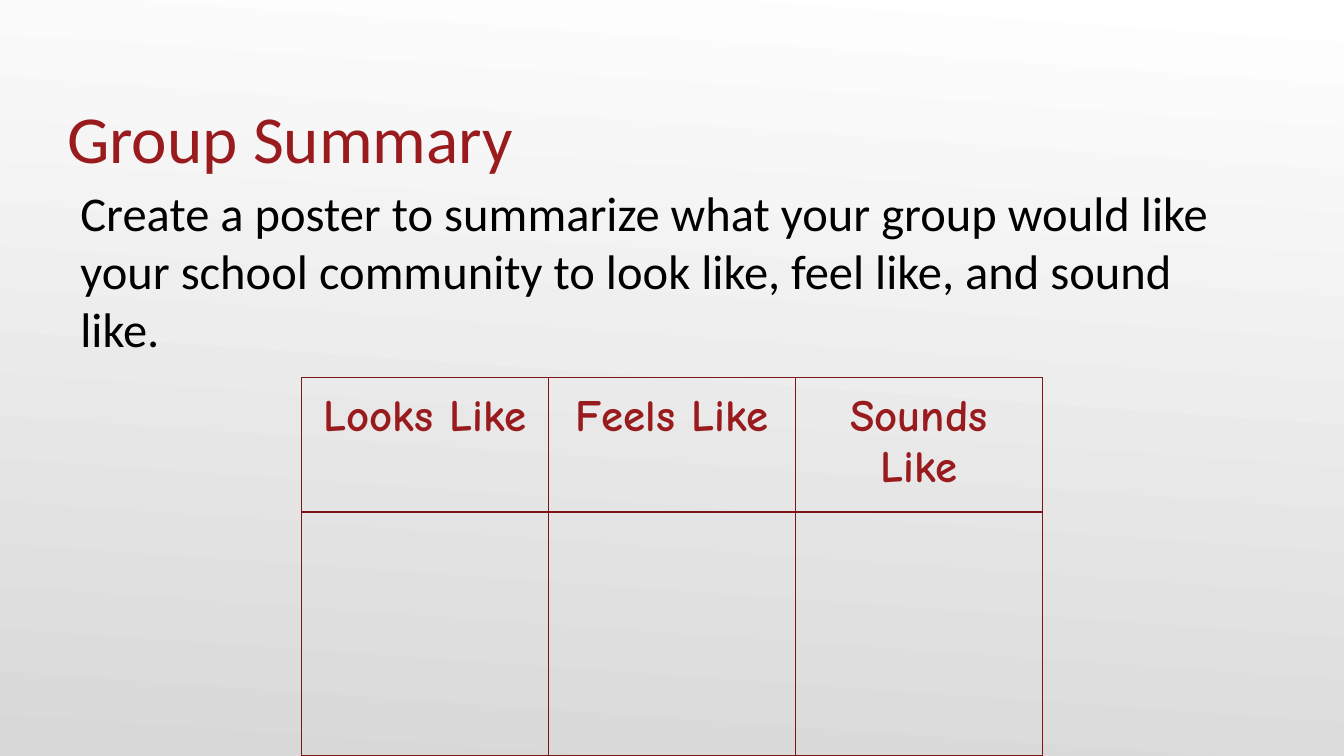
from dataclasses import dataclass

import pptx
import pptx.dml.color
import pptx.enum.text
import pptx.oxml
import pptx.oxml.ns
import pptx.util
from pptx.util import Inches

RGB = pptx.dml.color.RGBColor.from_string
Align = pptx.enum.text.PP_ALIGN
Anchor = pptx.enum.text.MSO_ANCHOR


@dataclass(frozen=True)
class TextStyle:
    font: str
    size: float
    color: str
    bold: bool = False
    align: Align = Align.LEFT


@dataclass(frozen=True)
class Theme:
    title: TextStyle = TextStyle("Calibri", 36, "991B1E")
    body: TextStyle = TextStyle("Calibri", 26, "000000")
    header: TextStyle = TextStyle("Comic Neue", 24, "991B1E", True, Align.CENTER)
    border_color: str = "7D1619"
    border_width: float = 0.75
    background: tuple[str, str] = ("FFFFFF", "D8D8D8")
    background_angle: float = 266


@dataclass(frozen=True)
class Frame:
    left: float
    top: float
    width: float
    height: float

    def lengths(self) -> tuple:
        return tuple(Inches(n) for n in (self.left, self.top, self.width, self.height))


THEME = Theme()
SLIDE_WIDTH = 10
SLIDE_HEIGHT = SLIDE_WIDTH * 9 / 16
TABLE_WIDTH = 5.51
ROW_HEIGHTS = (0.66, 1.81)
TITLE_FRAME = Frame(0.5, 0.38, 9, 0.94)
BODY_FRAME = Frame(0.5, 1.31, 9, 3.6)
TABLE_FRAME = Frame((SLIDE_WIDTH - TABLE_WIDTH) / 2, 2.81, TABLE_WIDTH, sum(ROW_HEIGHTS))
HEADERS = ("Looks Like", "Feels Like", "Sounds Like")
CELL_MARGIN = 0.1
INSTRUCTION = (
    "Create a poster to summarize what your group would like your school "
    "community to look like, feel like, and sound like."
)


def write_text(text_frame, text: str, style: TextStyle) -> None:
    text_frame.text = text
    para = text_frame.paragraphs[0]
    para.alignment = style.align
    for span in para.runs:
        span.font.name = style.font
        span.font.size = pptx.util.Pt(style.size)
        span.font.bold = style.bold
        span.font.color.rgb = RGB(style.color)


def paint_background(page) -> None:
    fill = page.background.fill
    fill.gradient()
    fill.gradient_angle = THEME.background_angle
    for stop, position, color in zip(fill.gradient_stops, (0, 1), THEME.background):
        stop.position = position
        stop.color.rgb = RGB(color)


def add_title(page, text: str) -> None:
    title = page.shapes.title
    title.left, title.top, title.width, title.height = TITLE_FRAME.lengths()
    frame = title.text_frame
    frame.vertical_anchor = Anchor.BOTTOM
    frame.margin_left = frame.margin_right = frame.margin_bottom = 0
    frame.margin_top = Inches(0.05)
    write_text(frame, text, THEME.title)


def add_body(page, text: str) -> None:
    box = page.shapes.add_textbox(*BODY_FRAME.lengths())
    box.text_frame.word_wrap = True
    write_text(box.text_frame, text, THEME.body)


def format_cell(cell) -> None:
    """Set the margins, give all four sides a line and leave the cell unfilled."""
    cell.margin_left = cell.margin_right = Inches(CELL_MARGIN)
    cell.margin_top = cell.margin_bottom = Inches(CELL_MARGIN)
    properties = cell._tc.get_or_add_tcPr()
    for side in ("lnL", "lnR", "lnT", "lnB"):
        properties.append(pptx.oxml.parse_xml(
            f'<a:{side} {pptx.oxml.ns.nsdecls("a")} w="{pptx.util.Pt(THEME.border_width)}">'
            f'<a:solidFill><a:srgbClr val="{THEME.border_color}"/></a:solidFill></a:{side}>'
        ))
    cell.fill.background()


def add_summary_table(page) -> None:
    table = page.shapes.add_table(
        len(ROW_HEIGHTS), len(HEADERS), *TABLE_FRAME.lengths()
    ).table
    table.first_row = table.horz_banding = False
    for column in table.columns:
        column.width = Inches(TABLE_FRAME.width / len(HEADERS))
    for row, height in zip(table.rows, ROW_HEIGHTS):
        row.height = Inches(height)
    for cell in table.iter_cells():
        format_cell(cell)
    for cell, header in zip(table.rows[0].cells, HEADERS):
        write_text(cell.text_frame, header, THEME.header)


def main() -> None:
    deck = pptx.Presentation()
    deck.slide_width, deck.slide_height = Inches(SLIDE_WIDTH), Inches(SLIDE_HEIGHT)
    page = deck.slides.add_slide(deck.slide_layouts.get_by_name("Title Only"))
    paint_background(page)
    add_title(page, "Group Summary")
    add_body(page, INSTRUCTION)
    add_summary_table(page)
    deck.save("out.pptx")


if __name__ == "__main__":
    main()
